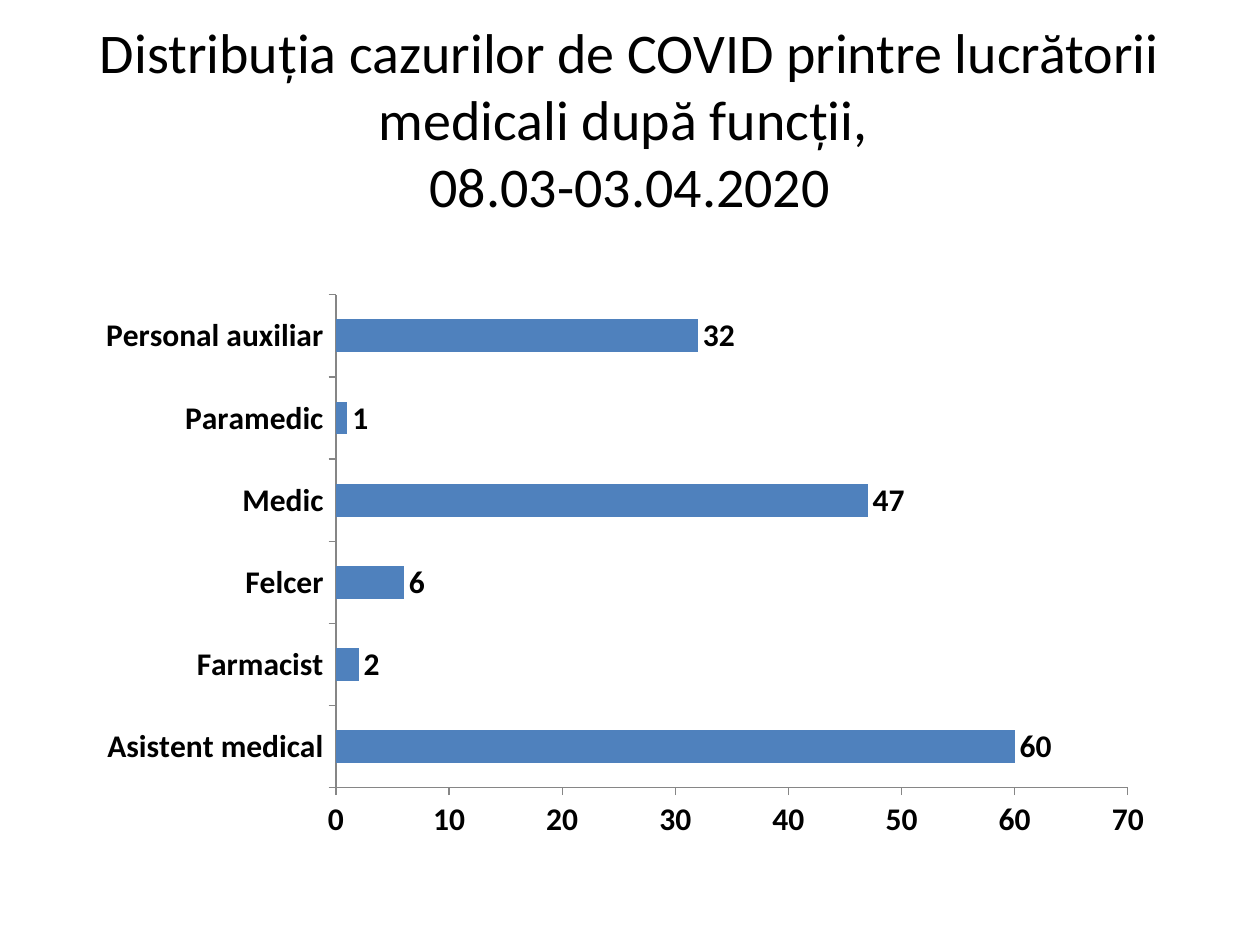
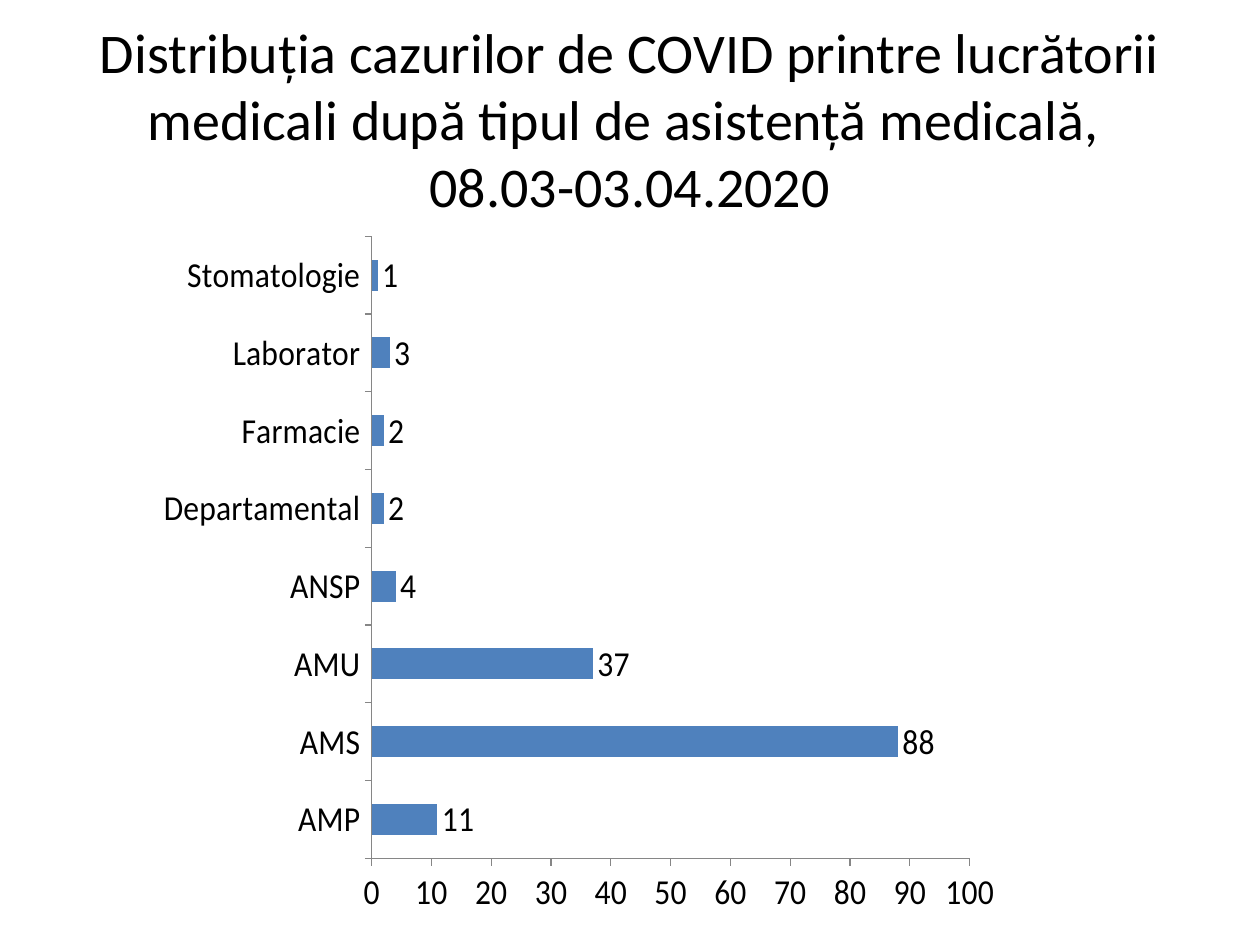
from dataclasses import dataclass
from typing import Optional

from lxml.etree import SubElement
from pptx import Presentation
from pptx.chart.data import CategoryChartData
from pptx.dml.color import RGBColor
from pptx.enum.chart import XL_CHART_TYPE, XL_LABEL_POSITION, XL_TICK_MARK
from pptx.enum.text import MSO_ANCHOR, MSO_AUTO_SIZE, PP_ALIGN
from pptx.oxml.ns import qn
from pptx.util import Inches, Pt

WIDTH, HEIGHT = Inches(10), Inches(7.5)
FONT = "Calibri"
BLACK, BLUE, GRAY, WHITE = "000000", "4F81BD", "868686", "FFFFFF"
TITLE_START = "Distribuția cazurilor de COVID printre lucrătorii medicali după"
PERIOD = "08.03-03.04.2020"
TITLE_ONLY = 5


@dataclass(frozen=True)
class Box:
    """Place and size as shares of the slide (or of the chart)."""
    left: float
    top: float
    width: float
    height: float

    def on_slide(self) -> tuple[int, int, int, int]:
        return (int(self.left * WIDTH), int(self.top * HEIGHT),
                int(self.width * WIDTH), int(self.height * HEIGHT))


@dataclass(frozen=True)
class CaseSlide:
    criterion: str
    cases: dict[str, int]
    box: Box
    font_size: int
    axis_max: int
    bold: bool = False
    plot: Optional[Box] = None


TITLE_BOX = Box(0.05, 0.04, 0.9, 0.17)
SLIDES = [
    CaseSlide(
        "funcții",
        {"Asistent medical": 60, "Farmacist": 2, "Felcer": 6, "Medic": 47,
         "Paramedic": 1, "Personal auxiliar": 32},
        Box(0.067, 0.3, 0.858, 0.599), font_size=18, axis_max=70, bold=True),
    CaseSlide(
        "tipul de asistență medicală",
        {"AMP": 11, "AMS": 88, "AMU": 37, "ANSP": 4, "Departamental": 2,
         "Farmacie": 2, "Laborator": 3, "Stomatologie": 1},
        Box(0.13, 0.248, 0.659, 0.725), font_size=20, axis_max=100,
        plot=Box(0.173, 0.003, 0.798, 0.908)),
]


def rgb(hex_color: str) -> RGBColor:
    return RGBColor.from_string(hex_color)


def set_font(font, size: int, bold: bool = False) -> None:
    font.name, font.size, font.bold = FONT, Pt(size), bold
    font.color.rgb = rgb(BLACK)


def set_title(slide, criterion: str) -> None:
    sp = slide.shapes.title
    sp.left, sp.top, sp.width, sp.height = TITLE_BOX.on_slide()
    tf = sp.text_frame
    tf.text = f"{TITLE_START} {criterion}, \v{PERIOD}"
    tf.word_wrap = True
    tf.auto_size = MSO_AUTO_SIZE.NONE
    tf.vertical_anchor = MSO_ANCHOR.MIDDLE
    p = tf.paragraphs[0]
    p.alignment = PP_ALIGN.CENTER
    set_font(p.font, 32)


def set_plot_area(chart, plot: Box) -> None:
    """Fix the inner plot area, which python-pptx cannot place itself."""
    area = chart._chartSpace.chart.plotArea
    for old in area.findall(qn("c:layout")):
        area.remove(old)
    layout = SubElement(area, qn("c:layout"))
    area.insert(0, layout)
    manual = SubElement(layout, qn("c:manualLayout"))
    settings = {"layoutTarget": "inner", "xMode": "edge", "yMode": "edge",
                "x": plot.left, "y": plot.top, "w": plot.width, "h": plot.height}
    for tag, value in settings.items():
        SubElement(manual, qn(f"c:{tag}")).set("val", str(value))


def add_case_chart(slide, content: CaseSlide) -> None:
    data = CategoryChartData()
    data.categories = list(content.cases)
    data.add_series("Series 1", list(content.cases.values()))
    chart = slide.shapes.add_chart(
        XL_CHART_TYPE.BAR_CLUSTERED, *content.box.on_slide(), data).chart
    chart.has_legend = False
    chart.has_title = False
    set_font(chart.font, content.font_size, content.bold)

    for axis in (chart.category_axis, chart.value_axis):
        axis.has_major_gridlines = False
        axis.major_tick_mark = XL_TICK_MARK.OUTSIDE
        axis.minor_tick_mark = XL_TICK_MARK.NONE
        axis.format.line.color.rgb = rgb(GRAY)
        axis.format.line.width = Pt(0.75)
    chart.value_axis.minimum_scale = 0
    chart.value_axis.maximum_scale = content.axis_max
    chart.value_axis.major_unit = 10

    bars = chart.plots[0]
    bars.gap_width = 150
    bars.vary_by_categories = False
    fill = bars.series[0].format.fill
    fill.solid()
    fill.fore_color.rgb = rgb(BLUE)
    bars.has_data_labels = True
    labels = bars.data_labels
    labels.show_value = True
    labels.position = XL_LABEL_POSITION.OUTSIDE_END
    set_font(labels.font, content.font_size, content.bold)
    if content.plot:
        set_plot_area(chart, content.plot)


def main() -> None:
    prs = Presentation()
    prs.slide_width, prs.slide_height = WIDTH, HEIGHT
    background = prs.slide_master.background.fill
    background.solid()
    background.fore_color.rgb = rgb(WHITE)
    for content in SLIDES:
        slide = prs.slides.add_slide(prs.slide_layouts[TITLE_ONLY])
        set_title(slide, content.criterion)
        add_case_chart(slide, content)
    prs.save("out.pptx")


if __name__ == "__main__":
    main()
